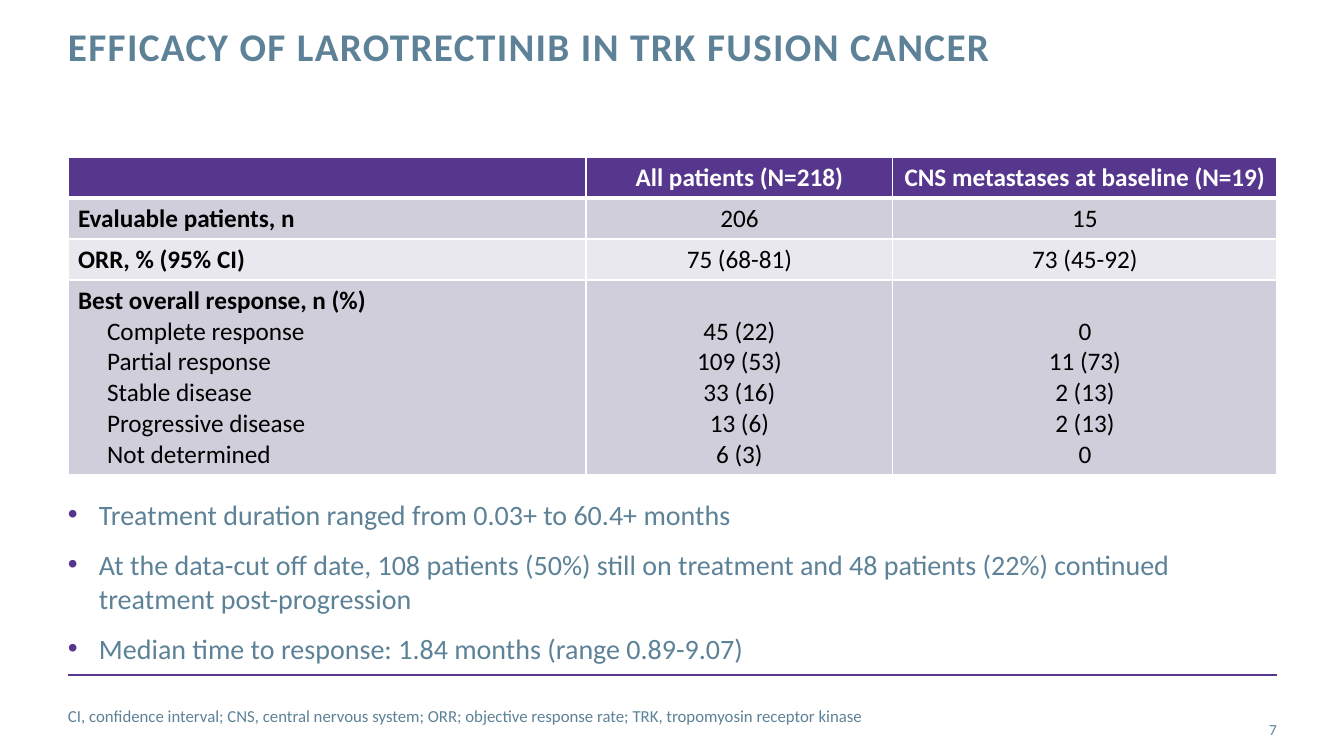
from lxml import etree
from pptx import Presentation
from pptx.dml.color import RGBColor
from pptx.enum.shapes import MSO_CONNECTOR
from pptx.enum.text import MSO_ANCHOR, MSO_AUTO_SIZE, PP_ALIGN
from pptx.oxml.ns import qn
from pptx.util import Pt

LEFT, CENTER, RIGHT = PP_ALIGN.LEFT, PP_ALIGN.CENTER, PP_ALIGN.RIGHT
TOP, MIDDLE, BOTTOM = MSO_ANCHOR.TOP, MSO_ANCHOR.MIDDLE, MSO_ANCHOR.BOTTOM

TITLE = "EFFICACY OF LAROTRECTINIB IN TRK FUSION CANCER"
HEADER = ["", "All patients (N=218)", "CNS metastases at baseline (N=19)"]
SINGLE_ROWS = [
    ["Evaluable patients, n", "206", "15"],
    ["ORR, % (95% CI)", "75 (68-81)", "73 (45-92)"],
]
RESPONSE_HEADING = "Best overall response, n (%)"
RESPONSES = [
    ("Complete response", "45 (22)", "0"),
    ("Partial response", "109 (53)", "11 (73)"),
    ("Stable disease", "33 (16)", "2 (13)"),
    ("Progressive disease", "13 (6)", "2 (13)"),
    ("Not determined", "6 (3)", "0"),
]
BULLETS = [
    "Treatment duration ranged from 0.03+ to 60.4+ months",
    "At the data-cut off date, 108 patients (50%) still on treatment and "
    "48 patients (22%) continued treatment post-progression",
    "Median time to response: 1.84 months (range 0.89-9.07)",
]
FOOTNOTE = ("CI, confidence interval; CNS, central nervous system; ORR; objective "
            "response rate; TRK, tropomyosin receptor kinase")
PAGE_NUMBER = "7"

FONT = "Calibri"
COLORS = {"purple": "56378D", "slate": "5D8298", "white": "FFFFFF",
          "black": "000000", "band": "D1CEDB", "pale": "E9E8EE"}

EMU_PER_PX = 914400 / 100.8
MARGIN, CONTENT_WIDTH = 68, 1209
COLUMN_WIDTHS = [518, 307, 384]
ROW_HEIGHTS = [41, 41, 41, 195]
TABLE_TOP, RULE_Y = 157, 675
BULLET_INDENT, RESPONSE_INDENT = 31, 29


def px(length):
    return round(length * EMU_PER_PX)


def color(name):
    return RGBColor.from_string(COLORS[name])


def add_run(para, text, size, tint, bold=False):
    span = para.add_run()
    span.text = text
    font = span.font
    font.name, font.size, font.bold = FONT, Pt(size), bold
    font.color.rgb = color(tint)
    return span


def add_paragraph(frame, index):
    return frame.paragraphs[0] if index == 0 else frame.add_paragraph()


def prepare_frame(frame, anchor):
    frame.word_wrap = True
    frame.auto_size = MSO_AUTO_SIZE.NONE
    frame.vertical_anchor = anchor
    frame.margin_left = frame.margin_top = frame.margin_right = frame.margin_bottom = 0


def add_text_box(slide, left, top, width, height, anchor=TOP):
    box = slide.shapes.add_textbox(px(left), px(top), px(width), px(height))
    prepare_frame(box.text_frame, anchor)
    return box.text_frame


def add_bullet(para):
    properties = para._p.get_or_add_pPr()
    properties.set("marL", str(px(BULLET_INDENT)))
    properties.set("indent", str(-px(BULLET_INDENT)))
    tint = etree.SubElement(properties, qn("a:buClr"))
    etree.SubElement(tint, qn("a:srgbClr"), val=COLORS["purple"])
    etree.SubElement(properties, qn("a:buFont"), typeface="Arial")
    etree.SubElement(properties, qn("a:buChar"), char="•")


def style_cell(cell, fill, top_width=1, bottom_width=1):
    properties = cell._tc.get_or_add_tcPr()
    for side, width in (("L", 1), ("R", 1), ("T", top_width), ("B", bottom_width)):
        border = etree.SubElement(properties, qn("a:ln" + side), w=str(Pt(width)))
        solid = etree.SubElement(border, qn("a:solidFill"))
        etree.SubElement(solid, qn("a:srgbClr"), val=COLORS["white"])
    cell.fill.solid()
    cell.fill.fore_color.rgb = color(fill)


def fill_cell(cell, lines, tint="black", bold_first=False, align=CENTER):
    for index, line in enumerate(lines):
        para = add_paragraph(cell.text_frame, index)
        para.alignment = align
        if align == LEFT and index:
            para._p.get_or_add_pPr().set("marL", str(px(RESPONSE_INDENT)))
        if line:
            add_run(para, line, 18, tint, bold_first and index == 0)


def add_title(slide):
    title = slide.shapes.title
    title.left, title.top = px(MARGIN), px(27)
    title.width, title.height = px(1001), px(89)
    prepare_frame(title.text_frame, TOP)
    para = title.text_frame.paragraphs[0]
    para.alignment = LEFT
    para.line_spacing = Pt(30)
    span = add_run(para, TITLE, 28, "slate", True)
    span.font._element.set("spc", "100")


def add_response_table(slide):
    table = slide.shapes.add_table(
        len(ROW_HEIGHTS), len(COLUMN_WIDTHS), px(MARGIN), px(TABLE_TOP),
        px(sum(COLUMN_WIDTHS)), px(sum(ROW_HEIGHTS))).table
    table.horz_banding = False
    for column, width in zip(table.columns, COLUMN_WIDTHS):
        column.width = px(width)
    for row, height in zip(table.rows, ROW_HEIGHTS):
        row.height = px(height)

    labels, *values = zip(*RESPONSES)
    response_row = [[RESPONSE_HEADING, *labels], *values]
    body = [[[text] for text in row] for row in SINGLE_ROWS] + [response_row]
    for column, text in enumerate(HEADER):
        cell = table.cell(0, column)
        style_cell(cell, "purple", bottom_width=3)
        fill_cell(cell, [text], "white", True)
    for number, row in enumerate(body, 1):
        for column, lines in enumerate(row):
            cell = table.cell(number, column)
            style_cell(cell, "band" if number % 2 else "pale",
                       top_width=3 if number == 1 else 1)
            is_label = column == 0
            fill_cell(cell, lines, bold_first=is_label,
                      align=LEFT if is_label else CENTER)
            cell.vertical_anchor = BOTTOM if row is response_row else TOP


def add_rule(slide):
    rule = slide.shapes.add_connector(
        MSO_CONNECTOR.STRAIGHT, px(MARGIN), px(RULE_Y),
        px(MARGIN + CONTENT_WIDTH), px(RULE_Y))
    rule.line.color.rgb = color("purple")
    rule.line.width = Pt(2)
    etree.SubElement(rule._element.spPr, qn("a:effectLst"))


def main():
    deck = Presentation()
    deck.slide_width, deck.slide_height = px(1344), px(756)
    slide = deck.slides.add_slide(deck.slide_layouts[5])

    add_rule(slide)
    add_title(slide)
    add_response_table(slide)

    frame = add_text_box(slide, MARGIN, 497, CONTENT_WIDTH, 143)
    for index, text in enumerate(BULLETS):
        para = add_paragraph(frame, index)
        if index:
            para.space_before = Pt(12)
        add_bullet(para)
        add_run(para, text, 20, "slate")

    frame = add_text_box(slide, MARGIN, 696, 895, 40, MIDDLE)
    add_run(frame.paragraphs[0], FOOTNOTE, 12, "slate")

    frame = add_text_box(slide, 1190, 709, 87, 40, MIDDLE)
    frame.paragraphs[0].alignment = RIGHT
    add_run(frame.paragraphs[0], PAGE_NUMBER, 11, "slate")

    deck.save("out.pptx")


if __name__ == "__main__":
    main()
